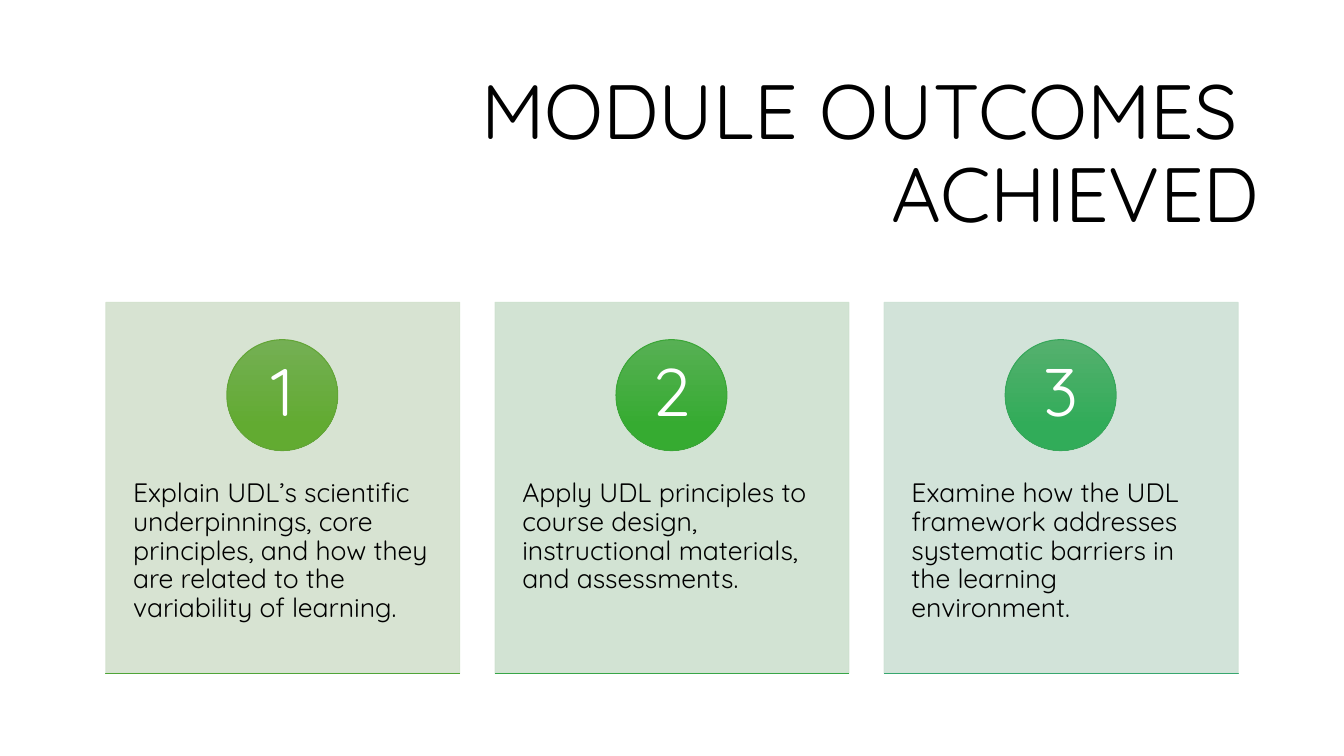
from pptx import Presentation
from pptx.dml.color import RGBColor
from pptx.enum.shapes import MSO_SHAPE
from pptx.enum.text import MSO_ANCHOR, MSO_AUTO_SIZE, PP_ALIGN
from pptx.oxml.ns import qn
from pptx.util import Emu, Pt
from lxml import etree

PX = 9144  # 100 px to the inch
FONT = "Quicksand"
RECT, OVAL = MSO_SHAPE.RECTANGLE, MSO_SHAPE.OVAL
TOP, MIDDLE = MSO_ANCHOR.TOP, MSO_ANCHOR.MIDDLE
LEFT, CENTER, RIGHT = PP_ALIGN.LEFT, PP_ALIGN.CENTER, PP_ALIGN.RIGHT

CARD_TOP, CARD_WIDTH, CARD_HEIGHT = 300, 351, 368
FIRST_CARD, CARD_PITCH = 105, 386

# Text, panel colour, (top, bottom, outline) of the badge and of the base rule
OUTCOMES = [
    ("Explain UDL’s scientific underpinnings, core principles, and how they "
     "are related to the variability of learning.",
     "D3E1CE", ("74AF54", "62AB31", "63A537"), ("65AF54", "4CAB31", "4FA537")),
    ("Apply UDL principles to course design, instructional materials, "
     "and assessments.",
     "CEE1CF", ("57B054", "36AB31", "3BA637"), ("54B05F", "31AC43", "37A647")),
    ("Examine how the UDL framework addresses systematic barriers in the "
     "learning environment.",
     "CEE1D5", ("55B06E", "31AC59", "37A75B"), ("55B07F", "31AD6F", "37A76F")),
]


def color(value):
    return RGBColor.from_string(value)


def px(*lengths):
    return [Emu(length * PX) for length in lengths]


def write(frame, text, size, ink="000000", align=LEFT, anchor=TOP, insets=(10, 5)):
    frame.word_wrap = True
    frame.auto_size = MSO_AUTO_SIZE.NONE
    frame.vertical_anchor = anchor
    side, edge = px(*insets)
    frame.margin_left = frame.margin_right = side
    frame.margin_top = frame.margin_bottom = edge
    para = frame.paragraphs[0]
    para.text = text
    para.alignment = align
    para.line_spacing = 0.9
    for span in para.runs:
        span.font.name = FONT
        span.font.size = Pt(size)
        span.font.color.rgb = color(ink)


def add_text(page, box, text, size, **style):
    write(page.shapes.add_textbox(*px(*box)).text_frame, text, size, **style)


def add_outlined(page, kind, box, outline):
    shape = page.shapes.add_shape(kind, *px(*box))
    shape.shadow.inherit = False
    shape.line.color.rgb = color(outline)
    shape.line.width = Pt(0.75)
    return shape


def add_shaded(page, kind, box, shades):
    upper, lower, outline = shades
    fill = add_outlined(page, kind, box, outline).fill
    fill.gradient()
    fill.gradient_angle = 270
    for stop, place, shade in zip(fill.gradient_stops, (0, 0.78), (upper, lower)):
        stop.position = place
        stop.color.rgb = color(shade)


def add_panel(page, box, tint):
    panel = add_outlined(page, RECT, box, tint)
    panel.fill.solid()
    panel.fill.fore_color.rgb = color(tint)
    # Fill and outline are 90 % opaque
    for paint in panel.element.spPr.iter(qn("a:srgbClr")):
        etree.SubElement(paint, qn("a:alpha")).set("val", "90000")


def add_title(page, box):
    title = page.shapes.title
    title.left, title.top, title.width, title.height = px(*box)
    write(title.text_frame, "MODULE OUTCOMES \vACHIEVED", 54.9,
          align=RIGHT, anchor=MIDDLE)


def add_card(page, box, number, outcome):
    text, tint, badge_shades, rule_shades = outcome
    left, top, width, height = box
    add_panel(page, box, tint)
    add_text(page, (left, top + 140, width, 221), text, 19, insets=(27, 36))

    # Numbered badge
    badge, label = 110, 78
    inset = (badge - label) // 2
    badge_left, badge_top = left + (width - badge) // 2, top + 37
    add_shaded(page, OVAL, (badge_left, badge_top, badge, badge), badge_shades)
    add_text(page, (badge_left + inset, badge_top + inset, label, label),
             str(number), 48, ink="FFFFFF", align=CENTER, anchor=MIDDLE,
             insets=(9, 1))

    # Flat rule along the base
    add_shaded(page, RECT, (left, top + height, width, 0), rule_shades)


def main():
    deck = Presentation()
    deck.slide_width, deck.slide_height = px(1333, 750)
    page = deck.slides.add_slide(deck.slide_layouts[5])
    add_title(page, (317, 84, 942, 141))
    for index, outcome in enumerate(OUTCOMES):
        left = FIRST_CARD + index * CARD_PITCH
        add_card(page, (left, CARD_TOP, CARD_WIDTH, CARD_HEIGHT), index + 1, outcome)
    deck.save("out.pptx")


if __name__ == "__main__":
    main()
